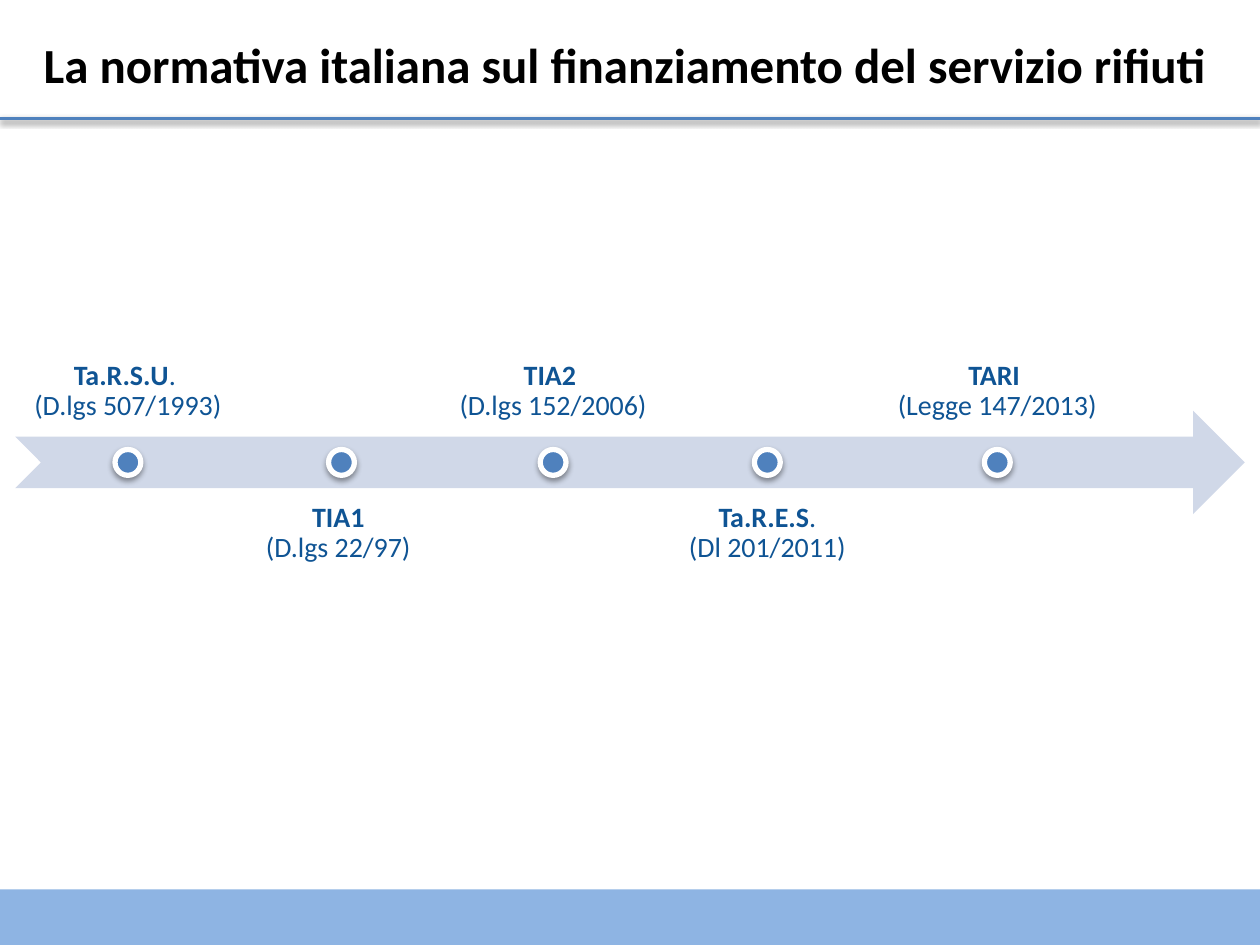
"""Builds a timeline slide on the Italian rules for funding the waste service."""
from lxml import etree
from pptx import Presentation
from pptx.dml.color import RGBColor
from pptx.enum.shapes import MSO_CONNECTOR, MSO_SHAPE
from pptx.enum.text import MSO_ANCHOR, PP_ALIGN
from pptx.oxml import parse_xml
from pptx.util import Inches, Pt

RECTANGLE, ARROW, OVAL = MSO_SHAPE.RECTANGLE, MSO_SHAPE.NOTCHED_RIGHT_ARROW, MSO_SHAPE.OVAL
TOP, MIDDLE, BOTTOM = MSO_ANCHOR.TOP, MSO_ANCHOR.MIDDLE, MSO_ANCHOR.BOTTOM

TITLE = "La normativa italiana sul finanziamento del servizio rifiuti "
# name, rest of the first line, law, column width
LAWS = [
    ("Ta.R.S.U", ". ", "(D.lgs 507/1993)", 1.79),
    ("TIA1 ", "", "(D.lgs 22/97) ", 1.48),
    ("TIA2 ", "", "(D.lgs 152/2006) ", 1.76),
    ("Ta.R.E.S", ".", "(Dl 201/2011)", 1.52),
    ("TARI ", "", "(Legge 147/2013)", 2.01),
]
WIDTH, HEIGHT = 10, 7.5
FOOTER_HEIGHT, RULE_Y = 0.44, 0.94
MARGIN, COLUMN_GAP = 0.12, 0.06
ROW, ARROW_TOP = 0.82, 3.26
DOT = ROW / 4
BLUE, INK = "4F81BD", "0F5494"
SHADOW = (
    '<a:effectLst xmlns:a="http://schemas.openxmlformats.org/drawingml/2006/main">'
    '<a:outerShdw blurRad="40000" dist="20000" dir="5400000" rotWithShape="0">'
    '<a:srgbClr val="000000"><a:alpha val="38000"/></a:srgbClr>'
    "</a:outerShdw></a:effectLst>"
)


def paint(target, colour):
    target.solid()
    target.fore_color.rgb = RGBColor.from_string(colour)


def add_shadow(shape):
    properties = shape._element.spPr
    for old in properties.findall("{*}effectLst"):
        properties.remove(old)
    properties.append(parse_xml(SHADOW))


def add_solid(slide, kind, left, top, width, height, colour):
    solid = slide.shapes.add_shape(kind, *map(Inches, (left, top, width, height)))
    solid.shadow.inherit = False
    paint(solid.fill, colour)
    solid.line.fill.background()
    return solid


def add_label(slide, box, anchor, size, colour, inset):
    frame = slide.shapes.add_textbox(*map(Inches, box)).text_frame
    frame.word_wrap = True
    frame.vertical_anchor = anchor
    frame.margin_left = frame.margin_right = Inches(inset)
    frame.margin_top = frame.margin_bottom = Inches(inset)
    paragraph = frame.paragraphs[0]
    paragraph.alignment = PP_ALIGN.CENTER
    paragraph.font.name, paragraph.font.size = "Calibri", Pt(size)
    paragraph.font.color.rgb = RGBColor.from_string(colour)
    return paragraph


def add_law(slide, index, left, name, ending, law, width):
    above = index % 2 == 0
    top = ARROW_TOP + ROW * (-0.75 if above else 0.75)
    label = add_label(slide, (left, top, width, ROW), BOTTOM if above else TOP, 16, INK, 0.12)
    label.line_spacing = 0.9
    heading = label.add_run()
    heading.text, heading.font.bold = name, True
    if ending:
        label.add_run().text = ending
    label.add_line_break()
    label.add_run().text = law
    dot = add_solid(slide, OVAL, left + (width - DOT) / 2, ARROW_TOP + (ROW - DOT) / 2, DOT, DOT, BLUE)
    paint(dot.line.fill, "FFFFFF")
    dot.line.width = Pt(3)
    add_shadow(dot)


def main():
    deck = Presentation()
    deck.slide_width, deck.slide_height = Inches(WIDTH), Inches(HEIGHT)
    slide = deck.slides.add_slide(deck.slide_layouts[6])

    add_solid(slide, RECTANGLE, 0, HEIGHT - FOOTER_HEIGHT, WIDTH, FOOTER_HEIGHT, "8EB4E3")
    title = add_label(slide, (0, 0, WIDTH, 1.02), MIDDLE, 28, "000000", 0.05)
    title.font.bold = True
    title.add_run().text = TITLE
    rule = slide.shapes.add_connector(
        MSO_CONNECTOR.STRAIGHT, 0, Inches(RULE_Y), Inches(WIDTH), Inches(RULE_Y))
    paint(rule.line.fill, BLUE)
    rule.line.width = Pt(2)
    add_shadow(rule)

    add_solid(slide, ARROW, MARGIN, ARROW_TOP, WIDTH - 2 * MARGIN, ROW, "D0D8E8")
    left = MARGIN
    for index, (name, ending, law, width) in enumerate(LAWS):
        add_law(slide, index, left, name, ending, law, width)
        left += width + COLUMN_GAP
    deck.save("out.pptx")


if __name__ == "__main__":
    main()
